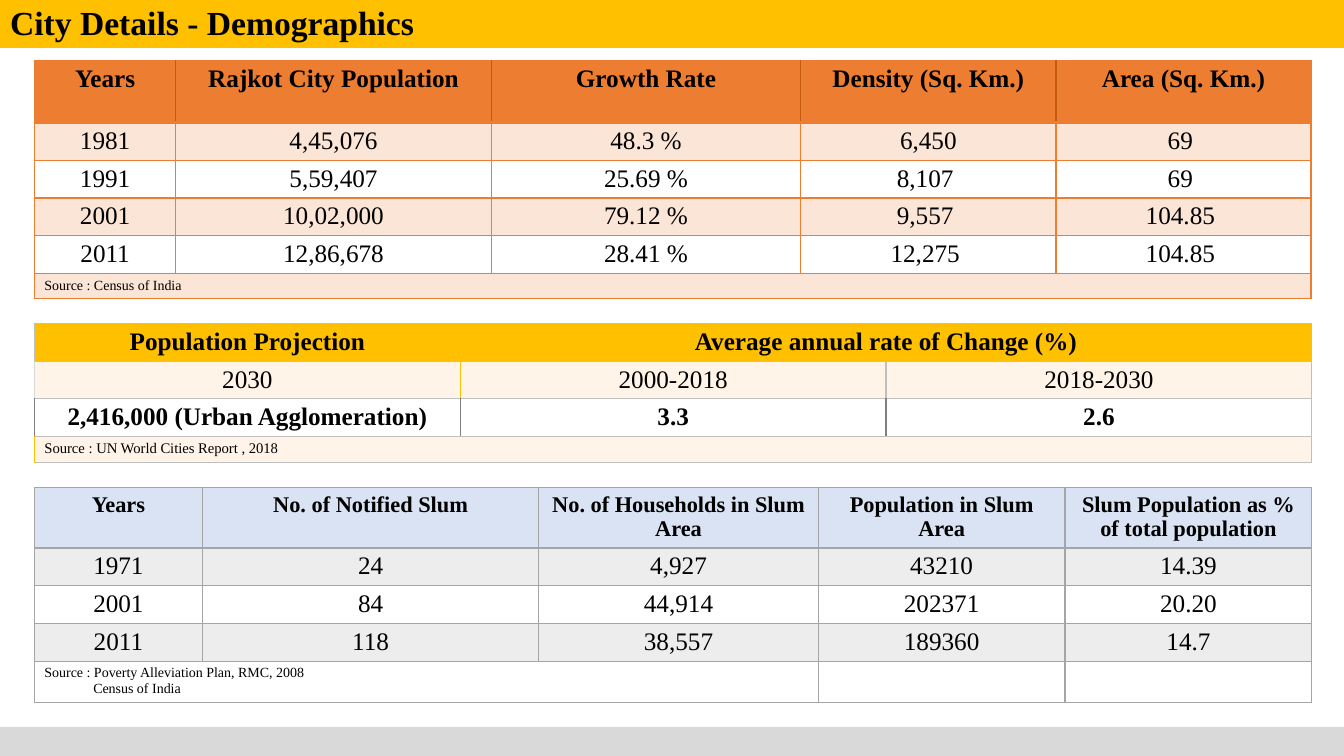
from dataclasses import dataclass
from lxml.etree import SubElement
from pptx import Presentation
from pptx.dml.color import RGBColor
from pptx.enum.shapes import MSO_SHAPE
from pptx.enum.text import MSO_ANCHOR, MSO_AUTO_SIZE, PP_ALIGN
from pptx.oxml.ns import qn
from pptx.util import Cm, Pt

FONT = "Times New Roman"
BLACK = RGBColor(0x00, 0x00, 0x00)
WHITE = RGBColor(0xFF, 0xFF, 0xFF)
GOLD = RGBColor(0xFF, 0xC0, 0x00)
CREAM = RGBColor(0xFF, 0xF4, 0xE7)
ORANGE = RGBColor(0xED, 0x7D, 0x31)
RUST = RGBColor(0xC5, 0x5A, 0x11)
PEACH = RGBColor(0xFB, 0xE5, 0xD6)
SKY = RGBColor(0xDA, 0xE3, 0xF3)
GREY = RGBColor(0xA5, 0xA5, 0xA5)
DARK_GREY = RGBColor(0x80, 0x80, 0x80)
SILVER = RGBColor(0xBF, 0xBF, 0xBF)
MIST = RGBColor(0xED, 0xED, 0xED)
FOOTER_GREY = RGBColor(0xD9, 0xD9, 0xD9)

TABLE_LEFT = 0.87
BODY_HEIGHT = 0.95


@dataclass
class Row:
    texts: list
    fill: RGBColor
    height: float = BODY_HEIGHT
    size: float = 18
    bold: bool = False
    align: PP_ALIGN = PP_ALIGN.CENTER
    span: tuple = ()
    edges: tuple = ()
    line_below: float = 1


def apply_format(target, values):
    for name, value in values.items():
        setattr(target, name, value)


def write_paragraph(para, text, size, bold, align):
    para.alignment = align
    span = para.add_run()
    span.text = text
    apply_format(span.font, {"name": FONT, "size": Pt(size), "bold": bold})
    span.font.color.rgb = BLACK


def add_border(cell, side, color, width):
    line = SubElement(cell._tc.get_or_add_tcPr(), qn(f"a:{side}"), w=str(Pt(width)))
    fill = SubElement(line, qn("a:solidFill"))
    SubElement(fill, qn("a:srgbClr"), val=str(color))


def fill_cell(cell, text, row):
    apply_format(cell, {"margin_left": Cm(0.25), "margin_right": Cm(0.25),
                        "margin_top": Cm(0.11), "margin_bottom": Cm(0.11),
                        "vertical_anchor": MSO_ANCHOR.TOP})
    cell.fill.solid()
    cell.fill.fore_color.rgb = row.fill
    for index, line in enumerate(text.splitlines()):
        frame = cell.text_frame
        para = frame.add_paragraph() if index else frame.paragraphs[0]
        if index:
            para._p.get_or_add_pPr().set("marL", str(Cm(1.23)))
        write_paragraph(para, line, row.size, row.bold, row.align)


def add_grid(page, top, widths, rows, line_color):
    heights = [row.height for row in rows]
    table = page.shapes.add_table(len(rows), len(widths), Cm(TABLE_LEFT), Cm(top),
                                  Cm(sum(widths)), Cm(sum(heights))).table
    apply_format(table, {"first_row": False, "horz_banding": False})
    for column, width in zip(table.columns, widths):
        column.width = Cm(width)
    above = 1
    for row_index, row in enumerate(rows):
        table.rows[row_index].height = Cm(row.height)
        edges = row.edges or (line_color,) * (len(widths) + 1)
        for column_index, text in enumerate(row.texts):
            cell = table.cell(row_index, column_index)
            add_border(cell, "lnL", edges[column_index], 1)
            add_border(cell, "lnR", edges[column_index + 1], 1)
            add_border(cell, "lnT", line_color, above)
            add_border(cell, "lnB", line_color, row.line_below)
            fill_cell(cell, text, row)
        if row.span:
            first, last = row.span
            table.cell(row_index, first).merge(table.cell(row_index, last))
        above = row.line_below


def banded(records, fill):
    return [Row(record, WHITE if index % 2 else fill) for index, record in enumerate(records)]


def source_row(text, columns, last, fill, height, size=10, edges=()):
    return Row([text] + [""] * (columns - 1), fill, height, size,
               align=PP_ALIGN.LEFT, span=(0, last), edges=edges)


def add_population(page):
    header = Row(["Years", "Rajkot City Population", "Growth Rate", "Density (Sq. Km.)",
                  "Area (Sq. Km.)"], ORANGE, 1.57, bold=True,
                 edges=(ORANGE, RUST, RUST, RUST, RUST, ORANGE), line_below=2)
    records = [
        ["1981", "4,45,076", "48.3 %", "6,450", "69 "],
        ["1991", "5,59,407", "25.69 %", "8,107 ", "69 "],
        ["2001", "10,02,000", "79.12 %", "9,557 ", "104.85 "],
        ["2011", "12,86,678", "28.41 %", "12,275 ", "104.85 "],
    ]
    source = source_row("Source : Census of India", 5, 4, PEACH, 0.63)
    add_grid(page, 1.52, [3.56, 7.95, 7.8, 6.43, 6.43],
             [header, *banded(records, PEACH), source], ORANGE)


def add_projection(page):
    rows = [
        Row(["Population Projection", "Average annual rate of Change (%)", ""], GOLD,
            bold=True, span=(1, 2), edges=(SILVER, GOLD, GOLD, GOLD)),
        Row(["2030", "2000-2018", "2018-2030"], CREAM, edges=(FOOTER_GREY, GOLD, SILVER, SILVER)),
        Row(["2,416,000 (Urban Agglomeration)", "3.3", "2.6"], WHITE, bold=True,
            edges=(DARK_GREY, DARK_GREY, DARK_GREY, SILVER)),
        source_row("Source : UN World Cities Report , 2018", 3, 2, CREAM, 0.65, 10.5,
                   (GOLD, SILVER, SILVER, SILVER)),
    ]
    add_grid(page, 8.15, [10.73] * 3, rows, SILVER)


def add_slums(page):
    header = Row(["Years", "No. of Notified Slum", "No. of Households in Slum Area",
                  "Population in Slum Area", "Slum Population as % of total population"],
                 SKY, 1.52, 16, bold=True, line_below=2)
    records = [
        ["1971", "24", "4,927", "43210", "14.39"],
        ["2001", "84", "44,914", "202371", "20.20"],
        ["2011", "118", "38,557", "189360", "14.7"],
    ]
    source = source_row("Source : Poverty Alleviation Plan, RMC, 2008\nCensus of India",
                        5, 2, WHITE, 1.04)
    add_grid(page, 12.29, [4.23, 8.48, 7.04, 6.22, 6.22],
             [header, *banded(records, MIST), source], GREY)


def add_title(page, width):
    title = page.shapes.title
    apply_format(title, {"left": Cm(0), "top": Cm(0), "width": width, "height": Cm(1.21)})
    title.fill.solid()
    title.fill.fore_color.rgb = GOLD
    frame = title.text_frame
    apply_format(frame, {"vertical_anchor": MSO_ANCHOR.BOTTOM, "word_wrap": True,
                         "auto_size": MSO_AUTO_SIZE.NONE})
    para = frame.paragraphs[0]
    para.line_spacing = 0.9
    write_paragraph(para, "City Details - Demographics", 24, True, PP_ALIGN.LEFT)


def add_footer(page, width):
    footer = page.shapes.add_shape(MSO_SHAPE.RECTANGLE, Cm(0), Cm(18.32), width, Cm(0.73))
    footer.shadow.inherit = False
    footer.fill.solid()
    footer.fill.fore_color.rgb = FOOTER_GREY
    footer.line.fill.background()


def main():
    deck = Presentation()
    apply_format(deck, {"slide_width": Cm(33.87), "slide_height": Cm(19.05)})
    page = deck.slides.add_slide(deck.slide_layouts[5])
    add_title(page, deck.slide_width)
    add_footer(page, deck.slide_width)
    add_population(page)
    add_projection(page)
    add_slums(page)
    deck.save("out.pptx")


if __name__ == "__main__":
    main()
